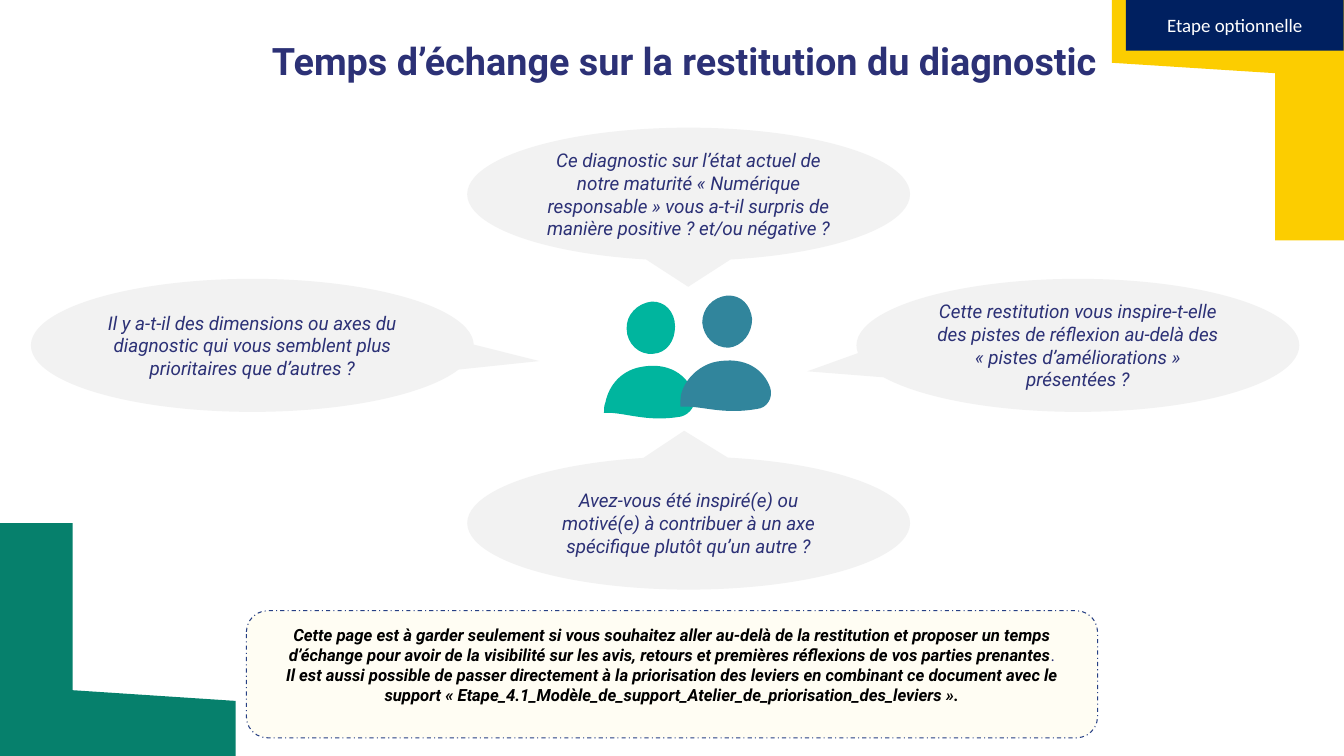
from dataclasses import dataclass

from lxml import etree
from pptx import Presentation
from pptx import util as u
from pptx.dml.color import RGBColor
from pptx.enum import dml, shapes, text
from pptx.oxml.ns import qn
from pptx.util import Cm


@dataclass(frozen=True)
class Theme:
    navy: str = "2C3176"
    badge: str = "002060"
    yellow: str = "FCCD00"
    green: str = "06806C"
    teal: str = "00B59E"
    blue: str = "31859C"
    bubble: str = "F2F2F2"
    note: str = "FFFDF3"
    note_line: str = "274084"
    black: str = "000000"
    white: str = "FFFFFF"
    font: str = "Roboto"
    badge_font: str = "Calibri"
    title_size: int = 36
    body_size: int = 18
    note_size: int = 16


@dataclass(frozen=True)
class Bubble:
    left: float
    top: float
    tail: tuple[float, float]
    words: str


@dataclass(frozen=True)
class Blob:
    """Curved outline in 1/100 inch: a start point, then three points per Bézier curve."""
    color: str
    points: list[tuple[int, int]]


THEME = Theme()
WIDTH, HEIGHT = 45.16, 25.4
BUBBLE_SIZE = (14.88, 4.47)
UNIT = 2.54 / 100  # 1/100 inch in cm
HARD_SPACE = chr(160)

CORNERS = [
    (THEME.yellow, [(WIDTH, 0), (37.36, 0), (37.36, 2.11), (42.85, 2.46),
                    (42.85, 8.08), (WIDTH, 8.08)]),
    (THEME.green, [(2.44, 17.58), (0, 17.58), (0, HEIGHT), (7.92, HEIGHT),
                   (7.92, 23.55), (2.44, 23.19)]),
]

PEOPLE = [
    Blob(THEME.teal, [
        (864, 468), (882, 467), (893, 451), (893, 432), (893, 412), (879, 398), (862, 399),
        (843, 401), (828, 417), (829, 435), (829, 454), (845, 470), (864, 468)]),
    Blob(THEME.teal, [
        (799, 546), (799, 541), (799, 537), (801, 532), (806, 508), (823, 491), (845, 486),
        (885, 477), (910, 497), (918, 521), (923, 534), (913, 548), (901, 551),
        (854, 559), (828, 545), (799, 546)]),
    Blob(THEME.blue, [
        (964, 460), (982, 458), (995, 441), (995, 422), (993, 404), (981, 390), (962, 391),
        (943, 393), (929, 408), (929, 427), (931, 446), (945, 460), (964, 460)]),
    Blob(THEME.blue, [
        (900, 538), (900, 533), (900, 529), (901, 522), (906, 501), (925, 484), (945, 479),
        (987, 470), (1011, 490), (1019, 513), (1023, 526), (1015, 540), (1001, 541),
        (954, 549), (928, 536), (900, 538)]),
]

BUBBLES = [
    Bubble(15.7, 4.29, (-0.001, 0.696),
           "Ce diagnostic sur l’état actuel de notre maturité « Numérique responsable » "
           "vous a-t-il surpris de manière positive ? et/ou négative ?"),
    Bubble(28.78, 9.37, (-0.611, 0.195),
           "Cette restitution vous inspire-t-elle des pistes de réflexion au-delà des "
           "« pistes d’améliorations » présentées ?"),
    Bubble(1.04, 9.37, (0.648, 0.118),
           "Il y a-t-il des dimensions ou axes du diagnostic qui vous semblent plus "
           "prioritaires que d’autres ?"),
    Bubble(15.7, 15.34, (-0.01, -0.694),
           "Avez-vous été inspiré(e) ou motivé(e) à contribuer à un axe spécifique "
           "plutôt qu’un autre ?"),
]

NOTE = [
    "Cette page est à garder seulement si vous souhaitez aller au-delà de la restitution "
    "et proposer un temps d’échange pour avoir de la visibilité sur les avis, retours et "
    "premières réflexions de vos parties prenantes",
    "Il est aussi possible de passer directement à la priorisation des leviers en combinant "
    "ce document avec le support « Etape_4.1_Modèle_de_support_Atelier_de_priorisation_"
    "des_leviers ».",
]


def bind_quotes(words: str) -> str:
    """Keep French quotation marks on the line of the words they enclose."""
    return words.replace("« ", "«" + HARD_SPACE).replace(" »", HARD_SPACE + "»")


def paint(shape, color: str) -> None:
    shape.shadow.inherit = False
    shape.fill.solid()
    shape.fill.fore_color.rgb = RGBColor.from_string(color)
    shape.line.fill.background()


def style(para, size: int, color: str, font: str = THEME.font,
          bold: bool = False, italic: bool = False) -> None:
    para.alignment = text.PP_ALIGN.CENTER
    for span in para.runs:
        span.font.name, span.font.size = font, u.Pt(size)
        span.font.bold, span.font.italic = bold, italic
        span.font.color.rgb = RGBColor.from_string(color)


def add_box(page, kind, left: float, top: float, width: float, height: float,
            color: str, words: str):
    box = page.shapes.add_shape(kind, Cm(left), Cm(top), Cm(width), Cm(height))
    paint(box, color)
    box.text_frame.word_wrap = True
    box.text_frame.vertical_anchor = text.MSO_ANCHOR.MIDDLE
    box.text_frame.text = bind_quotes(words)
    return box


def add_outline(tree, points: list[tuple[float, float]], color: str, close: bool = True):
    corners = [(Cm(x), Cm(y)) for x, y in points]
    builder = tree.build_freeform(*corners[0])
    builder.add_line_segments(corners[1:], close=close)
    outline = builder.convert_to_shape()
    paint(outline, color)
    return outline


def add_blob(tree, blob: Blob) -> None:
    points = [(x * UNIT, y * UNIT) for x, y in blob.points]
    outline = add_outline(tree, points, blob.color, close=False)
    # Turn every three straight segments into one Bézier curve
    track = outline.element.find(".//" + qn("a:path"))
    lines = track.findall(qn("a:lnTo"))
    for first in range(0, len(lines), 3):
        curve = etree.SubElement(track, qn("a:cubicBezTo"))
        for line in lines[first:first + 3]:
            curve.append(line[0])
            track.remove(line)


def add_title(page, words: str) -> None:
    title = page.shapes.title
    title.left, title.top, title.width, title.height = Cm(5.69), Cm(1.27), Cm(34.62), Cm(1.55)
    frame = title.text_frame
    frame.margin_left = frame.margin_right = frame.margin_top = frame.margin_bottom = 0
    frame.auto_size = text.MSO_AUTO_SIZE.NONE
    frame.vertical_anchor = text.MSO_ANCHOR.TOP
    frame.text = words
    style(frame.paragraphs[0], THEME.title_size, THEME.navy, bold=True)


def add_note(page) -> None:
    box = add_box(page, shapes.MSO_SHAPE.ROUNDED_RECTANGLE, 8.28, 20.52, 28.6, 4.27,
                  THEME.note, "\n".join(NOTE))
    box.line.color.rgb = RGBColor.from_string(THEME.note_line)
    box.line.width = u.Pt(1)
    box.line.dash_style = dml.MSO_LINE.DASH_DOT
    box.text_frame.vertical_anchor = text.MSO_ANCHOR.TOP
    box.text_frame.margin_top = Cm(0.26)
    stop = box.text_frame.paragraphs[0].add_run()
    stop.text = "."
    for para in box.text_frame.paragraphs:
        style(para, THEME.note_size, THEME.black, bold=True, italic=True)
    # The first full stop is plain and navy
    stop.font.bold = stop.font.italic = False
    stop.font.color.rgb = RGBColor.from_string(THEME.navy)


def main() -> None:
    deck = Presentation()
    deck.slide_width, deck.slide_height = Cm(WIDTH), Cm(HEIGHT)
    page = deck.slides.add_slide(deck.slide_layouts[5])

    # Corner decorations, title and note
    for color, points in CORNERS:
        add_outline(page.shapes, points, color)
    add_title(page, "Temps d’échange sur la restitution du diagnostic")
    add_note(page)

    # Two people in the centre
    people = page.shapes.add_group_shape()
    for blob in PEOPLE:
        add_blob(people.shapes, blob)

    # Questions around them
    for bubble in BUBBLES:
        box = add_box(page, shapes.MSO_SHAPE.OVAL_CALLOUT, bubble.left, bubble.top,
                      *BUBBLE_SIZE, THEME.bubble, bubble.words)
        box.adjustments[0], box.adjustments[1] = bubble.tail
        style(box.text_frame.paragraphs[0], THEME.body_size, THEME.navy, italic=True)

    # Badge in the top right corner
    badge = add_box(page, shapes.MSO_SHAPE.RECTANGLE, 37.83, 0, 7.32, 1.7,
                    THEME.badge, "Etape optionnelle")
    style(badge.text_frame.paragraphs[0], THEME.body_size, THEME.white, THEME.badge_font)

    deck.save("out.pptx")


if __name__ == "__main__":
    main()
